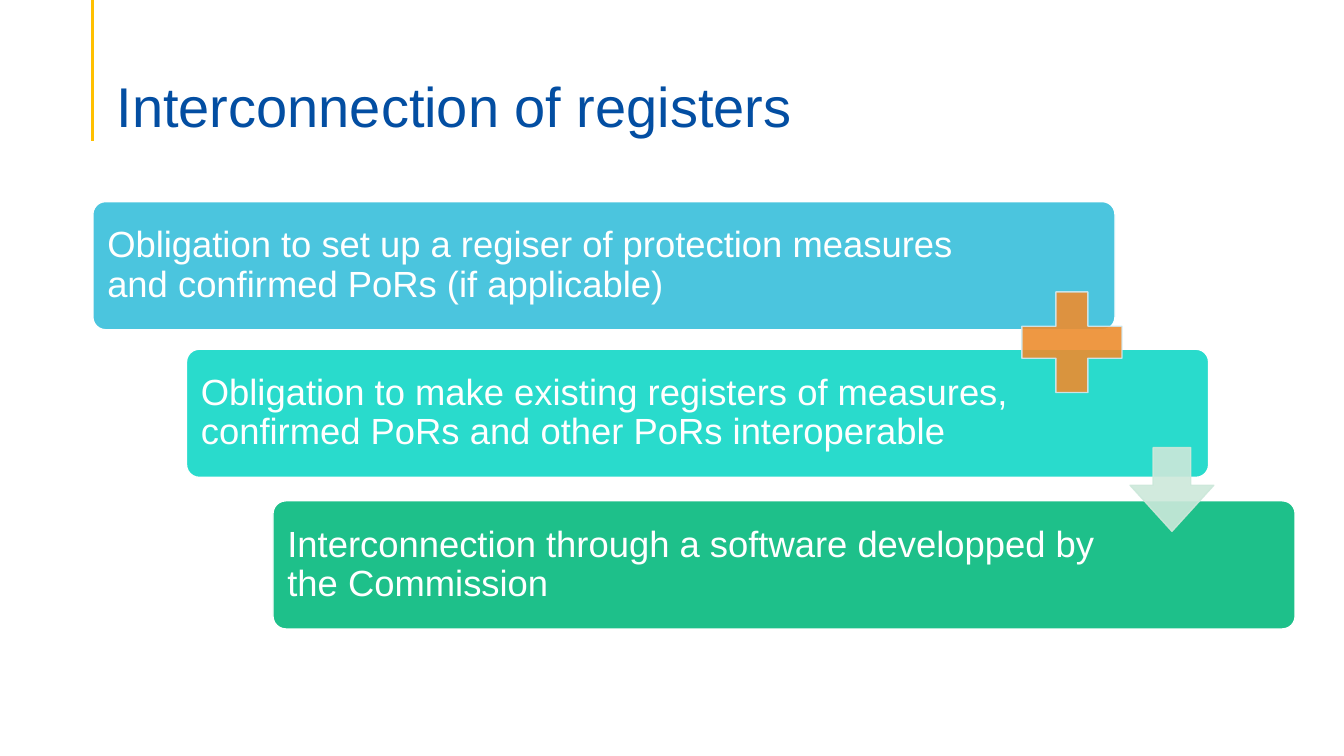
from lxml import etree
from pptx import Presentation
from pptx.dml.color import RGBColor
from pptx.enum.shapes import MSO_CONNECTOR, MSO_SHAPE
from pptx.enum.text import MSO_ANCHOR, MSO_AUTO_SIZE, PP_ALIGN
from pptx.oxml.ns import qn
from pptx.util import Cm, Pt

STRAIGHT = MSO_CONNECTOR.STRAIGHT
ROUNDED = MSO_SHAPE.ROUNDED_RECTANGLE
PLUS = MSO_SHAPE.MATH_PLUS
DOWN_ARROW = MSO_SHAPE.DOWN_ARROW
MIDDLE, BOTTOM = MSO_ANCHOR.MIDDLE, MSO_ANCHOR.BOTTOM
LEFT = PP_ALIGN.LEFT
NO_AUTOFIT = MSO_AUTO_SIZE.NONE

CARD_WIDTH, CARD_HEIGHT = 25.76, 3.23
# left, top, right text margin, fill, text
CARDS = [
    (2.34, 5.08, 3.6, "4BC5DE",
     "Obligation to set up a regiser of protection measures and confirmed PoRs (if applicable)"),
    (4.7, 8.8, 4.68, "29DBCC",
     "Obligation to make existing registers of measures, confirmed PoRs and other PoRs interoperable"),
    (6.88, 12.62, 4.68, "1EC08A",
     "Interconnection through a software developped by the Commission"),
]


def set_color(color_format, hex_color):
    color_format.rgb = RGBColor.from_string(hex_color)


def set_alpha(element, percent):
    """Make every colour under the element partly transparent."""
    for color in element.iter(qn("a:srgbClr")):
        etree.SubElement(color, qn("a:alpha")).set("val", str(percent * 1000))


def write_text(shape, text, *, size, color, margins, anchor, font="Arial"):
    """Fill the text frame; margins are left, top, right, bottom in cm."""
    frame = shape.text_frame
    frame.word_wrap = True
    frame.auto_size = NO_AUTOFIT
    frame.vertical_anchor = anchor
    (frame.margin_left, frame.margin_top,
     frame.margin_right, frame.margin_bottom) = map(Cm, margins)
    frame.text = text
    paragraph = frame.paragraphs[0]
    paragraph.alignment = LEFT
    paragraph.line_spacing = 0.9
    paragraph.font.name = font
    paragraph.font.size = Pt(size)
    set_color(paragraph.font.color, color)


class SlideBuilder:
    title_color = "034EA2"
    accent = "FFC000"
    white = "FFFFFF"

    def __init__(self, presentation):
        self.slide = presentation.slides.add_slide(presentation.slide_layouts[5])

    def title(self, text, left, top, width, height):
        title = self.slide.shapes.title
        title.left, title.top = Cm(left), Cm(top)
        title.width, title.height = Cm(width), Cm(height)
        write_text(title, text, size=40, color=self.title_color,
                   margins=(0.25, 0.13, 0.25, 0), anchor=BOTTOM)

    def line(self, x1, y1, x2, y2):
        line = self.slide.shapes.add_connector(STRAIGHT, Cm(x1), Cm(y1), Cm(x2), Cm(y2))
        set_color(line.line.color, self.accent)
        line.line.width = Pt(2.25)
        etree.SubElement(line._element.spPr, qn("a:effectLst"))

    def shape(self, kind, left, top, width, height, fill, outline, adjustments=(), opacity=100):
        shape = self.slide.shapes.add_shape(kind, Cm(left), Cm(top), Cm(width), Cm(height))
        shape.shadow.inherit = False
        for index, value in enumerate(adjustments):
            shape.adjustments[index] = value
        shape.fill.solid()
        set_color(shape.fill.fore_color, fill)
        set_color(shape.line.color, outline)
        shape.line.width = Pt(1)
        if opacity < 100:
            set_alpha(shape._element.spPr, opacity)
        return shape

    def card(self, left, top, right_margin, fill, text):
        card = self.shape(ROUNDED, left, top, CARD_WIDTH, CARD_HEIGHT, fill, self.white, (0.1,))
        write_text(card, text, size=26, color=self.white,
                   margins=(0.27, 0.27, right_margin, 0.27), anchor=MIDDLE)


def main():
    presentation = Presentation()
    presentation.slide_width, presentation.slide_height = Cm(33.87), Cm(19.05)
    builder = SlideBuilder(presentation)
    builder.line(2.34, 0, 2.34, 3.56)
    builder.title("Interconnection of registers", 2.69, 1.35, 29.21, 2.18)
    for card in CARDS:
        builder.card(*card)
    builder.shape(PLUS, 25.3, 6.9, 3.43, 3.45, "ED8D2F", "D0EAF2", opacity=90)
    builder.shape(DOWN_ARROW, 28.48, 11.28, 2.11, 2.11, "CCE8DA", "CCE8DA",
                  (0.45, 0.55), opacity=90)
    presentation.save("out.pptx")


if __name__ == "__main__":
    main()
